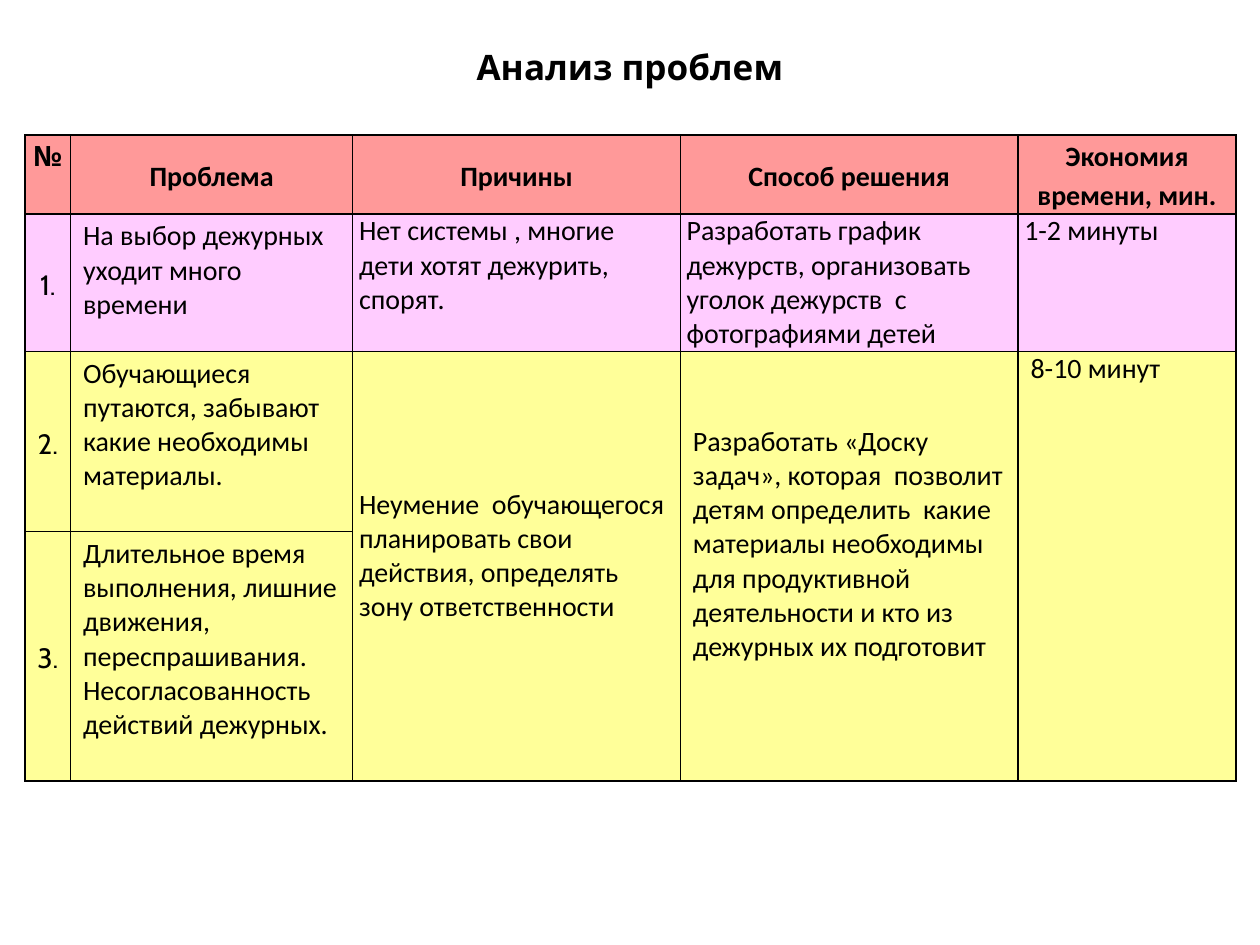
from dataclasses import dataclass

import pptx
import pptx.dml.color
import pptx.enum.text
import pptx.oxml
import pptx.oxml.ns
import pptx.util
from pptx.util import Inches

ALIGN = pptx.enum.text.PP_ALIGN
ANCHOR = pptx.enum.text.MSO_ANCHOR


@dataclass(frozen=True)
class Theme:
    ink: str = "000000"
    header: str = "FF9999"
    pink: str = "FFCCFF"
    yellow: str = "FFFF99"
    title_font: str = "Karla"
    number_font: str = "Cabin"
    body_font: str = "Calibri"
    title_size: int = 20
    body_size: int = 16
    border_width: int = 1


THEME = Theme()


@dataclass(frozen=True)
class Entry:
    """One table entry; side and top are its margins in inches."""
    text: str
    fill: str
    font: str = THEME.body_font
    bold: bool = False
    align: ALIGN = ALIGN.LEFT
    anchor: ANCHOR = ANCHOR.TOP
    spacing: float = 1.0
    side: float = 0.05
    top: float = 0
    bottom: float = 0
    row_span: int = 1


def heading(text: str, font: str = THEME.body_font,
            anchor: ANCHOR = ANCHOR.MIDDLE) -> Entry:
    return Entry(text, THEME.header, font, True, ALIGN.CENTER, anchor, 1.15)


def number(text: str, fill: str) -> Entry:
    return Entry(text, fill, THEME.number_font, align=ALIGN.CENTER,
                 anchor=ANCHOR.MIDDLE, spacing=1.15)


def problem(text: str, fill: str) -> Entry:
    return Entry(text, fill, side=0.1, top=0.04, bottom=0.04)


COLUMN_WIDTHS = (0.36, 2.24, 2.6, 2.68, 1.73)
ROW_HEIGHTS = (0.63, 1.09, 1.43, 1.98)
ROWS = (
    (heading("№", THEME.number_font, ANCHOR.TOP),
     heading("Проблема"),
     heading("Причины"),
     heading("Способ решения"),
     heading("Экономия времени, мин.", anchor=ANCHOR.TOP)),
    (number("1.", THEME.pink),
     problem("На выбор дежурных уходит много времени", THEME.pink),
     Entry("Нет системы , многие дети хотят дежурить, спорят.", THEME.pink),
     Entry("Разработать график дежурств, организовать уголок дежурств  с "
           "фотографиями детей", THEME.pink),
     Entry("1-2 минуты", THEME.pink)),
    (number("2.", THEME.yellow),
     problem("Обучающиеся путаются, забывают какие необходимы материалы.",
             THEME.yellow),
     Entry("Неумение  обучающегося планировать свои действия, определять "
           "зону ответственности", THEME.yellow, top=1.08, row_span=2),
     Entry("Разработать «Доску задач», которая  позволит детям определить  "
           "какие материалы необходимы для продуктивной деятельности и кто "
           "из дежурных их подготовит", THEME.yellow,
           side=0.1, top=0.58, bottom=0.04, row_span=2),
     Entry("8-10 минут", THEME.yellow, side=0.1, row_span=2)),
    (number("3.", THEME.yellow),
     problem("Длительное время выполнения, лишние движения, "
             "переспрашивания. Несогласованность действий дежурных.",
             THEME.yellow)),
)


def apply_format(target, values: dict) -> None:
    for attribute, value in values.items():
        setattr(target, attribute, value)


def write_text(paragraph, text: str, font: str, size: int, bold: bool,
               align: ALIGN, spacing: float = 1.0) -> None:
    apply_format(paragraph, {"alignment": align, "line_spacing": spacing})
    run = paragraph.add_run()
    run.text = text
    apply_format(run.font, {"name": font, "size": pptx.util.Pt(size),
                            "bold": bold})
    run.font.color.rgb = pptx.dml.color.RGBColor.from_string(THEME.ink)


def style_cell(cell, fill: str) -> None:
    """Outline all four sides, then fill the cell."""
    properties = cell._tc.get_or_add_tcPr()
    namespace = pptx.oxml.ns.nsdecls("a")
    width = pptx.util.Pt(THEME.border_width)
    for side in ("lnL", "lnR", "lnT", "lnB"):
        properties.append(pptx.oxml.parse_xml(
            f'<a:{side} {namespace} w="{width}"><a:solidFill>'
            f'<a:srgbClr val="{THEME.ink}"/></a:solidFill></a:{side}>'))
    cell.fill.solid()
    cell.fill.fore_color.rgb = pptx.dml.color.RGBColor.from_string(fill)


def draw_entry(cell, entry: Entry) -> None:
    apply_format(cell, {
        "margin_left": Inches(entry.side), "margin_right": Inches(entry.side),
        "margin_top": Inches(entry.top), "margin_bottom": Inches(entry.bottom),
        "vertical_anchor": entry.anchor})
    write_text(cell.text_frame.paragraphs[0], entry.text, entry.font,
               THEME.body_size, entry.bold, entry.align, entry.spacing)


def draw_title(slide, text: str) -> None:
    title = slide.shapes.add_textbox(Inches(0.5), Inches(0.3),
                                     Inches(9), Inches(0.46))
    apply_format(title.text_frame, {"word_wrap": True,
                                    "vertical_anchor": ANCHOR.MIDDLE})
    write_text(title.text_frame.paragraphs[0], text, THEME.title_font,
               THEME.title_size, True, ALIGN.CENTER)


def draw_analysis(slide) -> None:
    analysis = slide.shapes.add_table(
        len(ROW_HEIGHTS), len(COLUMN_WIDTHS), Inches(0.2), Inches(1.07),
        Inches(sum(COLUMN_WIDTHS)), Inches(sum(ROW_HEIGHTS))).table
    apply_format(analysis, {"first_row": False, "horz_banding": False})
    for column, width in zip(analysis.columns, COLUMN_WIDTHS):
        column.width = Inches(width)
    for row, height in zip(analysis.rows, ROW_HEIGHTS):
        row.height = Inches(height)
    for r, entries in enumerate(ROWS):
        for c, entry in enumerate(entries):
            cell = analysis.cell(r, c)
            draw_entry(cell, entry)
            for covered in range(r, r + entry.row_span):
                style_cell(analysis.cell(covered, c), entry.fill)
            if entry.row_span > 1:
                cell.merge(analysis.cell(r + entry.row_span - 1, c))


def main() -> None:
    deck = pptx.Presentation()
    apply_format(deck, {"slide_width": Inches(10),
                        "slide_height": Inches(7.5)})
    slide = deck.slides.add_slide(deck.slide_layouts[6])
    draw_title(slide, "Анализ проблем")
    draw_analysis(slide)
    deck.save("out.pptx")


if __name__ == "__main__":
    main()
